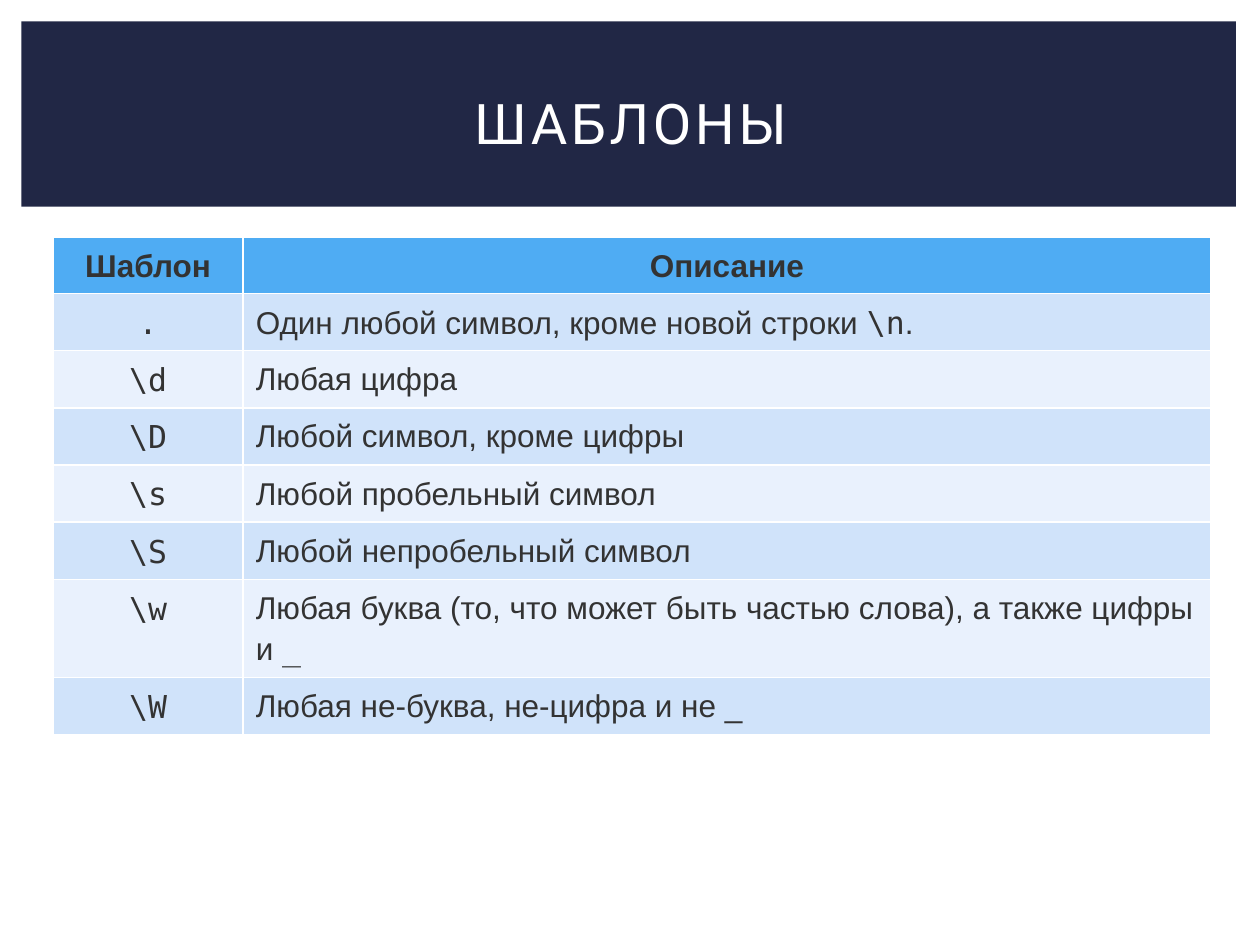
from pptx import Presentation
from pptx.dml.color import RGBColor
from pptx.enum.shapes import MSO_SHAPE as Shape
from pptx.enum.text import MSO_ANCHOR as Anchor, PP_ALIGN as Align
from pptx.util import Inches, Pt

COLORS = {
    "band": "212745",
    "title": "FFFFFF",
    "text": "333333",
    "header": "4FACF3",
    "odd": "D0E3FA",
    "even": "E9F1FD",
}
SANS, MONO, TITLE_FONT = "Arial", "DejaVu Sans Mono", "Roboto"

HEADINGS = ("Шаблон", "Описание")
# Each description is a list of (text, font) runs.
PATTERNS = [
    (".", [("Один любой символ, кроме новой строки ", SANS), ("\\n", MONO), (".", SANS)]),
    ("\\d", [("Любая цифра", SANS)]),
    ("\\D", [("Любой символ, кроме цифры", SANS)]),
    ("\\s", [("Любой пробельный символ", SANS)]),
    ("\\S", [("Любой непробельный символ", SANS)]),
    ("\\w", [("Любая буква (то, что может быть частью слова), а также цифры и ", SANS),
             ("_", MONO)]),
    ("\\W", [("Любая не-буква, не-цифра и не _", SANS)]),
]
ROW_HEIGHT = 0.45
TWO_LINE_HEIGHT = 0.78
TWO_LINE_PATTERN = "\\w"


def color(name):
    return RGBColor.from_string(COLORS[name])


def add_run(paragraph, text, font, size, color_name, bold=False):
    run = paragraph.add_run()
    run.text = text
    run.font.name = font
    run.font.size = Pt(size)
    run.font.bold = bold
    run.font.color.rgb = color(color_name)
    return run


def add_title_band(slide, left, top, width, height, text):
    band = slide.shapes.add_shape(Shape.RECTANGLE, left, top, width, height)
    band.shadow.inherit = False
    band.fill.solid()
    band.fill.fore_color.rgb = color("band")
    band.line.fill.background()

    title = slide.shapes.title
    title.element.addprevious(band.element)
    title.left, title.top = left + Inches(0.25), top + Inches(0.22)
    title.width, title.height = width - Inches(0.47), height - Inches(0.32)
    frame = title.text_frame
    frame.vertical_anchor = Anchor.MIDDLE
    paragraph = frame.paragraphs[0]
    paragraph.alignment = Align.CENTER
    run = add_run(paragraph, text, TITLE_FONT, 32, "title")
    run.font._element.set("spc", "200")


def fill_cell(cell, runs, fill, alignment, bold=False):
    cell.fill.solid()
    cell.fill.fore_color.rgb = color(fill)
    cell.margin_left = cell.margin_right = Inches(0.1)
    cell.margin_top, cell.margin_bottom = Inches(0.05), Inches(0.07)
    paragraph = cell.text_frame.paragraphs[0]
    paragraph.alignment = alignment
    paragraph.line_spacing = 1.15
    for text, font in runs:
        add_run(paragraph, text, font, 18, "text", bold)


def add_pattern_table(slide, left, top, width):
    heights = [ROW_HEIGHT] + [
        TWO_LINE_HEIGHT if pattern == TWO_LINE_PATTERN else ROW_HEIGHT
        for pattern, _ in PATTERNS
    ]
    table = slide.shapes.add_table(
        len(heights), len(HEADINGS), left, top, width, Inches(sum(heights))
    ).table
    table.columns[0].width = Inches(1.51)
    table.columns[1].width = width - Inches(1.51)
    for row, height in zip(table.rows, heights):
        row.height = Inches(height)

    for column, heading in enumerate(HEADINGS):
        fill_cell(table.cell(0, column), [(heading, SANS)], "header", Align.CENTER, bold=True)
    for row, (pattern, description) in enumerate(PATTERNS, start=1):
        fill = "odd" if row % 2 else "even"
        fill_cell(table.cell(row, 0), [(pattern, MONO)], fill, Align.CENTER)
        fill_cell(table.cell(row, 1), description, fill, Align.LEFT)


def main():
    presentation = Presentation()
    presentation.slide_width, presentation.slide_height = Inches(10), Inches(7.5)
    slide = presentation.slides.add_slide(presentation.slide_layouts[5])
    add_title_band(slide, Inches(0.17), Inches(0.17), Inches(9.64), Inches(1.47), "ШАБЛОНЫ")
    add_pattern_table(slide, Inches(0.42), Inches(1.88), Inches(9.19))
    presentation.save("out.pptx")


if __name__ == "__main__":
    main()
